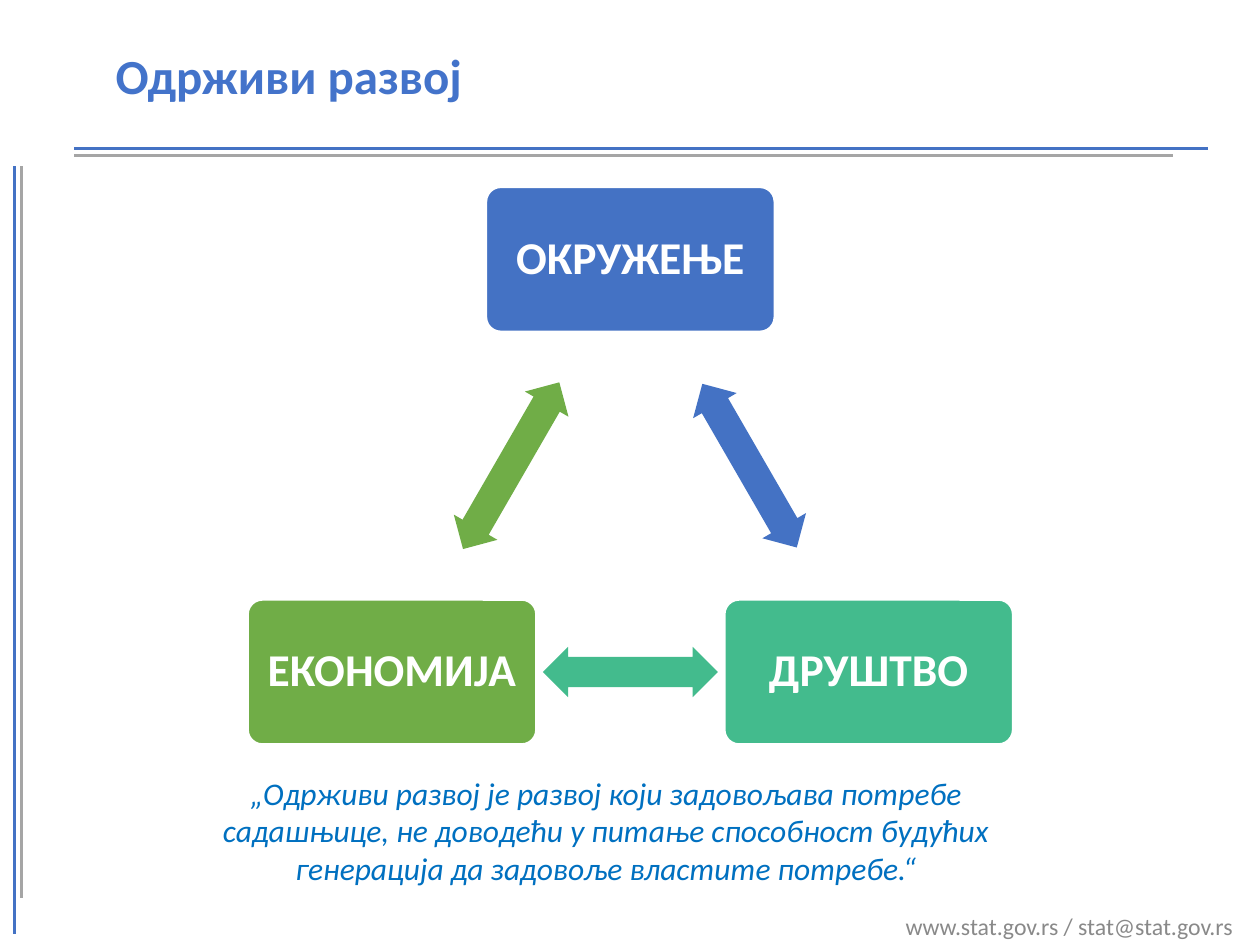
import pptx
import pptx.util
import pptx.dml.color
import pptx.enum.shapes
import pptx.enum.text
import pptx.oxml.ns
import lxml.etree

Pt = pptx.util.Pt
RGBColor = pptx.dml.color.RGBColor
SHAPE = pptx.enum.shapes.MSO_SHAPE
ALIGN = pptx.enum.text.PP_ALIGN
MIDDLE = pptx.enum.text.MSO_ANCHOR.MIDDLE
TOP = pptx.enum.text.MSO_ANCHOR.TOP

BLUE = RGBColor(0x44, 0x72, 0xC4)
TITLE_BLUE = RGBColor(0x43, 0x73, 0xCA)
QUOTE_BLUE = RGBColor(0x00, 0x70, 0xC0)
TEAL = RGBColor(0x43, 0xBB, 0x8D)
GREEN = RGBColor(0x70, 0xAD, 0x47)
GRAY = RGBColor(0xA5, 0xA5, 0xA5)
FOOTER_GRAY = RGBColor(0x89, 0x89, 0x89)
WHITE = RGBColor(0xFF, 0xFF, 0xFF)

# Content, all lengths in points
TITLE = "Одрживи развој"
QUOTE = ("„Одрживи развој је развој који задовољава потребе садашњице, "
         "не доводећи у питање способност будућих генерација "
         "да задовоље властите потребе.“")
FOOTER = "www.stat.gov.rs / stat@stat.gov.rs"

# Border lines: start x, start y, end x, end y, colour
BORDERS = [
    (8.2, 95, 8.2, 534, BLUE),
    (12.2, 95, 12.2, 513, GRAY),
    (42.5, 85.1, 690.5, 85.1, BLUE),
    (42.5, 88.8, 670.5, 88.8, GRAY),
]

# Triangle of pillars: text, centre x, centre y, colour
CENTER_X, SIDE = 360.2, 272.4
TOP_Y, BOTTOM_Y = 148.2, 384
PILLARS = [
    ("ОКРУЖЕЊЕ", CENTER_X, TOP_Y, BLUE),
    ("ДРУШТВО", CENTER_X + SIDE / 2, BOTTOM_Y, TEAL),
    ("ЕКОНОМИЈА", CENTER_X - SIDE / 2, BOTTOM_Y, GREEN),
]
PILLAR_WIDTH, PILLAR_HEIGHT = 164.6, 82.4
ARROW_LENGTHS = [108, 100, 110]
ARROW_ANGLES = [60, 180, 300]
ARROW_HEIGHT = 28.8


def write(shape, text, size, color, align=ALIGN.LEFT, anchor=MIDDLE,
          bold=False, italic=False, spacing=1.0):
    frame = shape.text_frame
    frame.word_wrap = True
    frame.vertical_anchor = anchor
    paragraph = frame.paragraphs[0]
    paragraph.alignment = align
    paragraph.line_spacing = spacing
    run = paragraph.add_run()
    run.text = text
    font = run.font
    font.name, font.size, font.bold, font.italic = "Calibri", Pt(size), bold, italic
    font.color.rgb = color


def add_text(slide, left, top, width, height, *text, **style):
    box = slide.shapes.add_textbox(Pt(left), Pt(top), Pt(width), Pt(height))
    write(box, *text, **style)


def add_block(slide, kind, center_x, center_y, width, height, color):
    shape = slide.shapes.add_shape(kind, Pt(center_x - width / 2),
                                   Pt(center_y - height / 2), Pt(width), Pt(height))
    shape.shadow.inherit = False
    shape.fill.solid()
    shape.fill.fore_color.rgb = color
    shape.line.fill.background()
    return shape


def add_border(slide, x1, y1, x2, y2, color):
    line = slide.shapes.add_connector(pptx.enum.shapes.MSO_CONNECTOR.STRAIGHT,
                                      Pt(x1), Pt(y1), Pt(x2), Pt(y2))
    line.line.color.rgb = color
    line.line.width = Pt(1.75)
    lxml.etree.SubElement(line._element.spPr, pptx.oxml.ns.qn("a:effectLst"))


def add_pillar(slide, text, x, y, color):
    box = add_block(slide, SHAPE.ROUNDED_RECTANGLE, x, y,
                    PILLAR_WIDTH, PILLAR_HEIGHT, color)
    box.adjustments[0] = 0.1
    box.line.color.rgb = WHITE
    box.line.width = Pt(1)
    write(box, text, 26, WHITE, align=ALIGN.CENTER, bold=True, spacing=0.9)


def main():
    presentation = pptx.Presentation()
    presentation.slide_width, presentation.slide_height = Pt(720), Pt(540)
    slide = presentation.slides.add_slide(presentation.slide_layouts[6])

    # Footer, border lines and title
    add_text(slide, 468, 518.4, 243.4, 21.6, FOOTER, 13.6, FOOTER_GRAY,
             align=ALIGN.RIGHT)
    for border in BORDERS:
        add_border(slide, *border)
    add_text(slide, 59, 0, 582, 90, TITLE, 28, TITLE_BLUE, bold=True, spacing=0.9)

    # Each pillar, then the arrow halfway to the next one
    for index, (text, x, y, color) in enumerate(PILLARS):
        add_pillar(slide, text, x, y, color)
        next_x, next_y = PILLARS[(index + 1) % len(PILLARS)][1:3]
        arrow = add_block(slide, SHAPE.LEFT_RIGHT_ARROW, (x + next_x) / 2,
                          (y + next_y) / 2, ARROW_LENGTHS[index], ARROW_HEIGHT, color)
        arrow.adjustments[0], arrow.adjustments[1] = 0.6, 0.5
        arrow.rotation = ARROW_ANGLES[index]

    # Definition
    add_text(slide, 111.6, 438.5, 469.4, 72.7, QUOTE, 18, QUOTE_BLUE,
             align=ALIGN.CENTER, anchor=TOP, italic=True)

    presentation.save("out.pptx")


if __name__ == "__main__":
    main()
